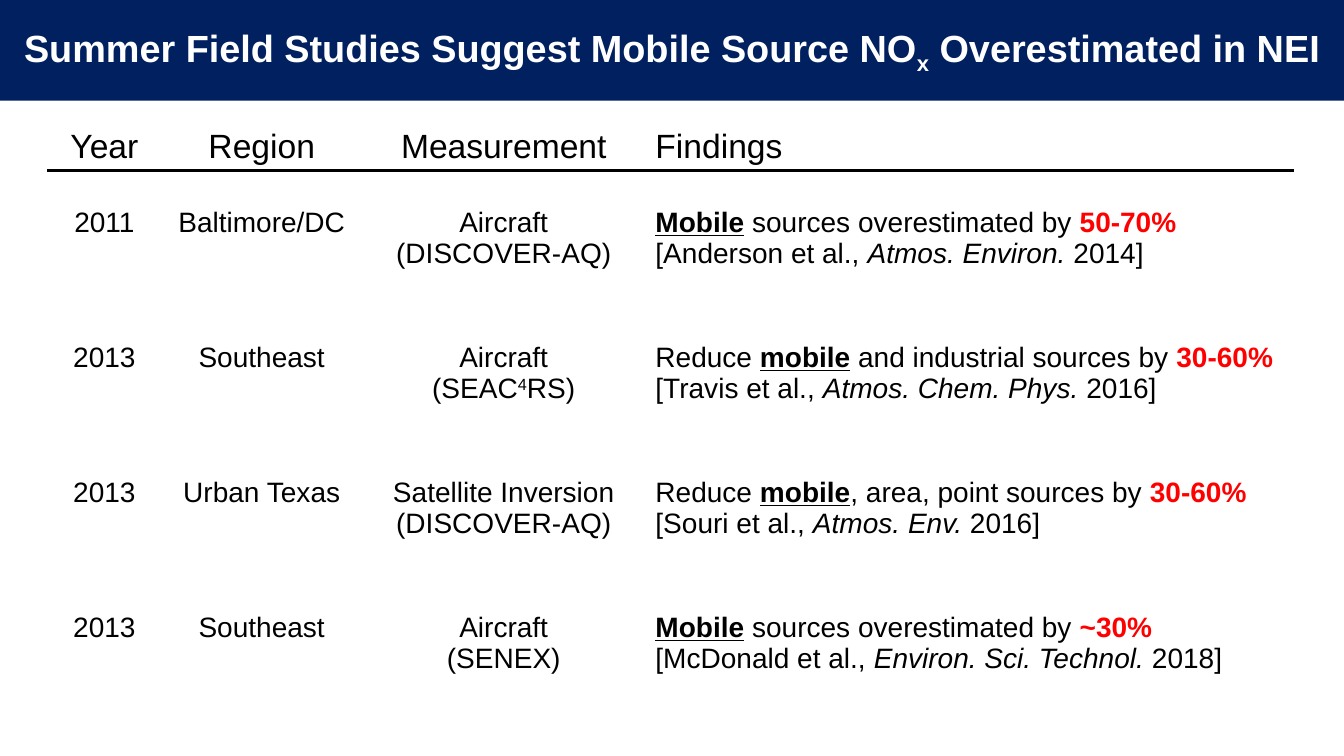
from dataclasses import dataclass, field

from lxml.etree import SubElement
from pptx import Presentation
from pptx.dml.color import RGBColor
from pptx.enum.text import MSO_ANCHOR, MSO_AUTO_SIZE, PP_ALIGN
from pptx.oxml.ns import qn
from pptx.util import Inches, Pt


@dataclass(frozen=True)
class Theme:
    """Colours, type sizes and run styles."""
    face: str = "Arial"
    navy: str = "002060"
    white: str = "FFFFFF"
    black: str = "000000"
    red: str = "FF0000"
    title: int = 27
    head: int = 24
    body: int = 20
    thin: int = 1
    thick: int = 3
    marks: dict = field(default_factory=lambda: {
        "plain": {},
        "key": {"bold": True, "underline": True},
        "hot": {"bold": True},
        "cite": {"italic": True},
        "sub": {},
        "sup": {},
    })
    shifts: dict = field(default_factory=lambda: {"sub": "-25000", "sup": "30000"})


class Deck:
    """Hold the theme and current slide; lengths are percents of the slide."""

    def __init__(self, theme):
        """Open a wide deck with one title-only slide."""
        self.theme = theme
        self.show = Presentation()
        self.show.slide_width, self.show.slide_height = Inches(13.33), Inches(7.5)
        self.slide = self.show.slides.add_slide(self.show.slide_layouts[5])

    def wide(self, share):
        """Turn a percent of the width into a length."""
        return round(self.show.slide_width * share / 100)

    def high(self, share):
        """Turn a percent of the height into a length."""
        return round(self.show.slide_height * share / 100)

    def text(self, frame, lines, size, ink, align, bold=False):
        """Fill a text frame with lines of marked runs."""
        theme = self.theme
        for spot, line in enumerate(lines):
            para = frame.add_paragraph() if spot else frame.paragraphs[0]
            para.alignment = align
            for words, mark in line:
                run = para.add_run()
                run.text = words
                style = {"name": theme.face, "size": Pt(size), "bold": bold}
                for name, value in (style | theme.marks[mark]).items():
                    setattr(run.font, name, value)
                tint = theme.red if mark == "hot" else ink
                run.font.color.rgb = RGBColor.from_string(tint)
                if mark in theme.shifts:
                    run.font._element.set("baseline", theme.shifts[mark])

    def banner(self, line, height):
        """Turn the title into a full-width band."""
        title = self.slide.shapes.title
        place = {"left": 0, "top": 0, "width": self.wide(100), "height": self.high(height)}
        for name, value in place.items():
            setattr(title, name, value)
        title.fill.solid()
        title.fill.fore_color.rgb = RGBColor.from_string(self.theme.navy)
        frame = title.text_frame
        form = {"word_wrap": True, "auto_size": MSO_AUTO_SIZE.NONE,
                "vertical_anchor": MSO_ANCHOR.MIDDLE}
        for name, value in form.items():
            setattr(frame, name, value)
        self.text(frame, [line], self.theme.title, self.theme.white, PP_ALIGN.CENTER, True)

    def edge(self, cell, side, tint, width):
        """Draw one border of a cell."""
        line = SubElement(cell._tc.get_or_add_tcPr(), qn(f"a:ln{side}"), w=str(Pt(width)))
        fill = SubElement(line, qn("a:solidFill"))
        SubElement(fill, qn("a:srgbClr"), val=tint)

    def table(self, left, top, widths, heights, rows, inset):
        """Add a plain table with a heavy rule below its head."""
        theme = self.theme
        grid = self.slide.shapes.add_table(
            len(rows), len(widths), self.wide(left), self.high(top),
            self.wide(sum(widths)), self.high(sum(heights))).table
        grid.first_row = grid.horz_banding = False
        for column, share in zip(grid.columns, widths):
            column.width = self.wide(share)
        for row, share in zip(grid.rows, heights):
            row.height = self.high(share)
        for r, row in enumerate(rows):
            for c, lines in enumerate(row):
                cell = grid.cell(r, c)
                for side in "LRTB":
                    rule = (r, side) in ((0, "B"), (1, "T"))
                    self.edge(cell, side, theme.black if rule else theme.white,
                              theme.thick if rule else theme.thin)
                cell.fill.background()
                if r:
                    cell.margin_top = self.high(inset)
                align = PP_ALIGN.LEFT if c == len(row) - 1 else PP_ALIGN.CENTER
                size = theme.body if r else theme.head
                self.text(cell.text_frame, lines, size, theme.black, align)

    def save(self):
        """Save the deck."""
        self.show.save("out.pptx")


def plain(*texts):
    """Make one unmarked line from each text."""
    return [[(text, "plain")] for text in texts]


def finding(claim, share, team, work, year):
    """Make a claim line and its source line."""
    return [[*claim, (" by ", "plain"), (share, "hot")],
            [(f"[{team} et al., ", "plain"), (work, "cite"), (f" {year}]", "plain")]]


def main():
    """Build the slide."""
    deck = Deck(Theme())
    deck.banner([("Summer Field Studies Suggest Mobile Source NO", "plain"), ("x", "sub"),
                 (" Overestimated in NEI", "plain")], 13.33)
    more = [("Mobile", "key"), (" sources overestimated", "plain")]
    less = [("Reduce ", "plain"), ("mobile", "key")]
    seac = plain("Aircraft") + [[("(SEAC", "plain"), ("4", "sup"), ("RS)", "plain")]]
    studies = [
        ("2011", "Baltimore/DC", plain("Aircraft", "(DISCOVER-AQ)"),
         finding(more, "50-70%", "Anderson", "Atmos. Environ.", 2014)),
        ("2013", "Southeast", seac,
         finding(less + [(" and industrial sources", "plain")], "30-60%", "Travis",
                 "Atmos. Chem. Phys.", 2016)),
        ("2013", "Urban Texas", plain("Satellite Inversion", "(DISCOVER-AQ)"),
         finding(less + [(", area, point sources", "plain")], "30-60%", "Souri",
                 "Atmos. Env.", 2016)),
        ("2013", "Southeast", plain("Aircraft", "(SENEX)"),
         finding(more, "~30%", "McDonald", "Environ. Sci. Technol.", 2018)),
    ]
    heads = [plain(name) for name in ("Year", "Region", "Measurement", "Findings")]
    rows = [heads] + [[plain(year), plain(place), means, notes]
                      for year, place, means, notes in studies]
    deck.table(3.53, 16.27, (8.48, 14.93, 21.08, 48.24),
               [6.27] + [17.87] * len(studies), rows, 4.8)
    deck.save()


if __name__ == "__main__":
    main()
